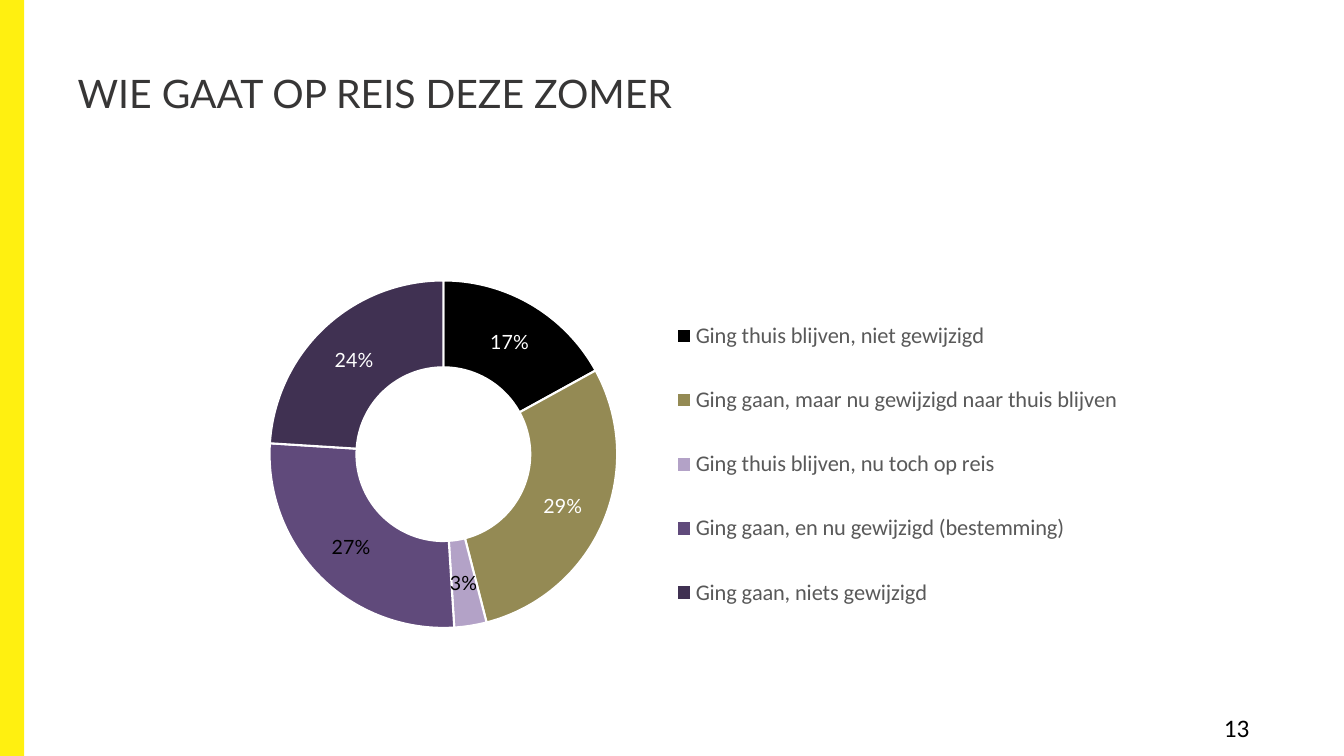
from lxml import etree
from pptx import Presentation
from pptx import util as u
from pptx.chart import data as chart_data
from pptx.dml import color
from pptx.enum import chart as chart_enum, shapes, text
from pptx.oxml import ns

COLOURS = {
    "accent": "FFF010",
    "title": "373636",
    "legend": "595959",
    "black": "000000",
    "white": "FFFFFF",
}
ANSWERS = [
    ("Ging thuis blijven, niet gewijzigd", 0.17, "000000", "white"),
    ("Ging gaan, maar nu gewijzigd naar thuis blijven", 0.29, "948A54", "white"),
    ("Ging thuis blijven, nu toch op reis", 0.03, "B3A2C7", "black"),
    ("Ging gaan, en nu gewijzigd (bestemming)", 0.27, "604A7B", "black"),
    ("Ging gaan, niets gewijzigd", 0.24, "403152", "white"),
]


def rgb(name):
    """Return a named colour."""
    return color.RGBColor.from_string(COLOURS[name])


def style_font(font, name, size, colour):
    """Set typeface, size and colour of a font."""
    font.name = name
    font.size = u.Pt(size)
    font.bold = False
    font.color.rgb = rgb(colour)


def place(shape, left, top, width, height):
    """Move and size a shape in inches."""
    shape.left, shape.top = u.Inches(left), u.Inches(top)
    shape.width, shape.height = u.Inches(width), u.Inches(height)


def add_accent_bar(slide):
    """Draw the coloured bar along the left edge."""
    bar = slide.shapes.add_shape(
        shapes.MSO_SHAPE.RECTANGLE, 0, 0, u.Inches(0.24), u.Inches(7.5))
    bar.shadow.inherit = False
    bar.fill.solid()
    bar.fill.fore_color.rgb = rgb("accent")
    bar.line.fill.background()


def set_title(slide, words):
    """Fill, place and format the title placeholder."""
    title = slide.shapes.title
    place(title, 0.67, 0.3, 12, 1.25)
    frame = title.text_frame
    frame.text = words
    frame.vertical_anchor = text.MSO_ANCHOR.MIDDLE
    paragraph = frame.paragraphs[0]
    paragraph.alignment = text.PP_ALIGN.LEFT
    style_font(paragraph.runs[0].font, "Lato", 28, "title")


def add_page_number(slide, number):
    """Write the page number at the lower right."""
    box = slide.shapes.add_textbox(
        u.Inches(12.04), u.Inches(7.02), u.Inches(0.63), u.Inches(0.4))
    frame = box.text_frame
    frame.word_wrap = True
    frame.text = number
    style_font(frame.paragraphs[0].runs[0].font, "Calibri", 18, "black")


def set_layout(parent, index, left, top, width, height, inner=False):
    """Fix the place of a chart part as fractions of the chart."""
    for old in parent.findall(ns.qn("c:layout")):
        parent.remove(old)
    layout = etree.Element(ns.qn("c:layout"))
    manual = etree.SubElement(layout, ns.qn("c:manualLayout"))
    settings = [("layoutTarget", "inner")] if inner else []
    settings += [("xMode", "edge"), ("yMode", "edge"), ("x", left),
                 ("y", top), ("w", width), ("h", height)]
    for tag, value in settings:
        etree.SubElement(manual, ns.qn(f"c:{tag}")).set("val", str(value))
    parent.insert(index, layout)


def format_legend(chart):
    """Show the legend to the right of the ring."""
    chart.has_legend = True
    legend = chart.legend
    legend.position = chart_enum.XL_LEGEND_POSITION.RIGHT
    legend.include_in_layout = False
    style_font(legend.font, "Calibri", 16, "legend")
    chart_legend = chart.element.find(".//" + ns.qn("c:legend"))
    set_layout(chart_legend, 1, 0.49, 0.19, 0.5, 0.7)


def add_travel_chart(slide):
    """Add the doughnut chart of travel plans."""
    data = chart_data.CategoryChartData(number_format="0%")
    data.categories = [answer[0] for answer in ANSWERS]
    data.add_series("Series 1", [answer[1] for answer in ANSWERS])
    chart = slide.shapes.add_chart(
        chart_enum.XL_CHART_TYPE.DOUGHNUT, u.Inches(2.1), u.Inches(1.87),
        u.Inches(9.19), u.Inches(5.07), data).chart
    chart.has_title = False
    style_font(chart.font, "Calibri", 10, "black")
    format_legend(chart)

    plot = chart.plots[0]
    plot.vary_by_categories = True
    plot.has_data_labels = False
    series = plot.series[0]
    labels = series.data_labels
    labels.show_value = True
    labels.show_percentage = False
    labels.number_format = "0%"
    labels.number_format_is_linked = False
    style_font(labels.font, "Lato", 14, "white")
    for index, (_, _, fill, label_colour) in enumerate(ANSWERS):
        point = series.points[index]
        point.format.fill.solid()
        point.format.fill.fore_color.rgb = color.RGBColor.from_string(fill)
        point.format.line.color.rgb = rgb("white")
        point.format.line.width = u.Pt(1.5)
        if label_colour != "white":
            style_font(point.data_label.font, "Lato", 14, label_colour)

    plot_area = chart.element.find(".//" + ns.qn("c:plotArea"))
    set_layout(plot_area, 0, 0.05, 0.18, 0.4, 0.68, inner=True)
    plot_area.find(".//" + ns.qn("c:holeSize")).set("val", "52")


def main():
    """Build and save the slide."""
    presentation = Presentation()
    presentation.slide_width = u.Inches(13.33)
    presentation.slide_height = u.Inches(7.5)
    slide = presentation.slides.add_slide(presentation.slide_layouts[5])
    add_accent_bar(slide)
    set_title(slide, "WIE GAAT OP REIS DEZE ZOMER")
    add_travel_chart(slide)
    add_page_number(slide, "13")
    presentation.save("out.pptx")


if __name__ == "__main__":
    main()
